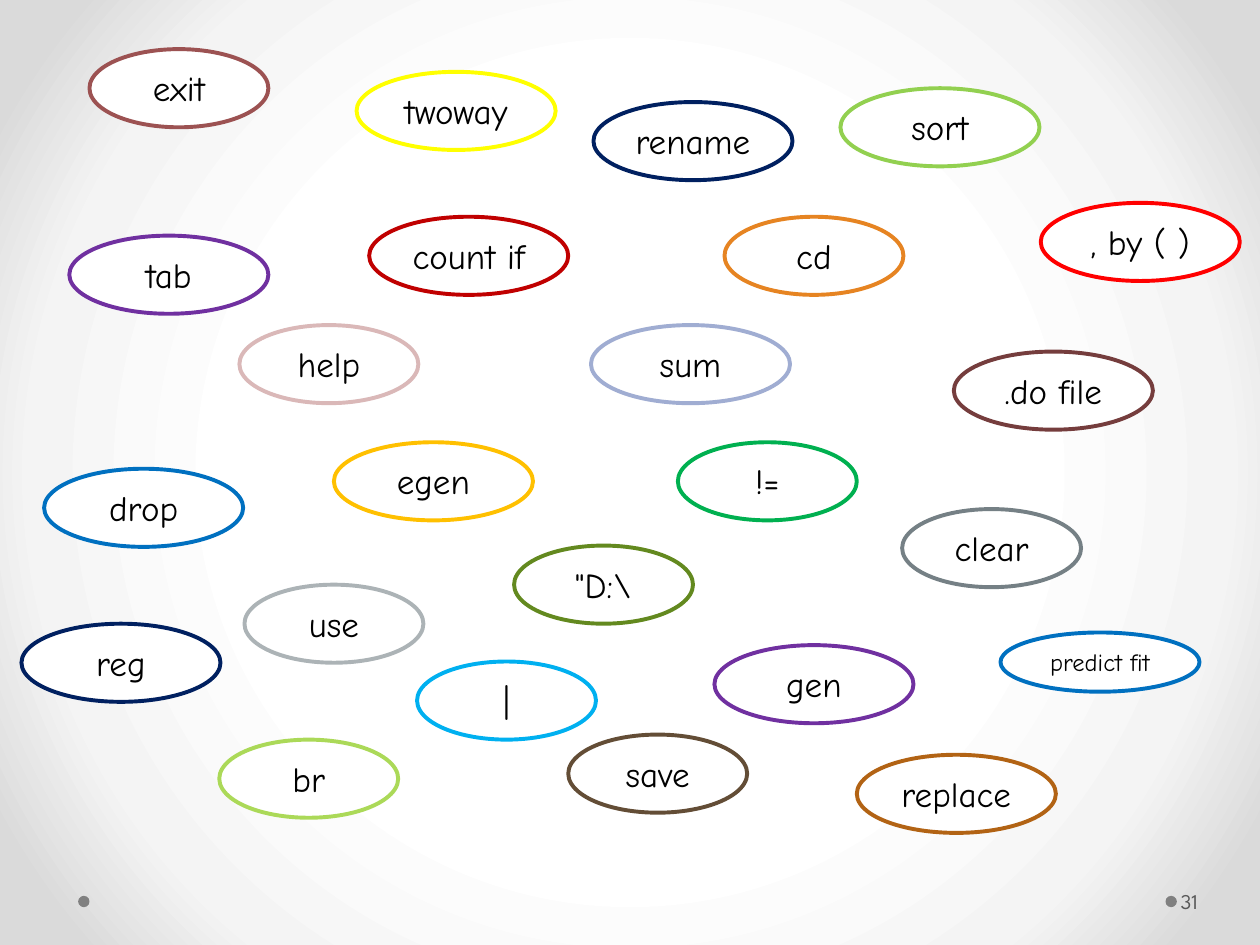
from lxml import etree
from pptx import Presentation
from pptx import util as u
from pptx.dml.color import RGBColor
from pptx.enum import shapes, text
from pptx.oxml import parse_xml
from pptx.oxml.ns import nsdecls

WHITE = RGBColor(0xFF, 0xFF, 0xFF)
PALE_GREY = RGBColor(0xF4, 0xF4, 0xF4)
EDGE_GREY = RGBColor(0xDA, 0xDA, 0xDA)
DOT_GREY = RGBColor(0x80, 0x80, 0x80)
NUMBER_GREY = RGBColor(0x59, 0x59, 0x59)
BLACK = RGBColor(0x00, 0x00, 0x00)
BRICK = RGBColor(0x9C, 0x52, 0x52)
ROSE = RGBColor(0xDA, 0xB8, 0xB8)
ORANGE = RGBColor(0xE6, 0x84, 0x22)
OLIVE = RGBColor(0x63, 0x89, 0x1F)
SILVER = RGBColor(0xAC, 0xB3, 0xB6)
SLATE = RGBColor(0x75, 0x80, 0x85)
LIME = RGBColor(0xAB, 0xD9, 0x58)
BROWN = RGBColor(0x63, 0x4D, 0x36)
COPPER = RGBColor(0xB2, 0x63, 0x14)
MAROON = RGBColor(0x75, 0x3D, 0x3D)
PERIWINKLE = RGBColor(0xA0, 0xAD, 0xD2)
PURPLE = RGBColor(0x70, 0x30, 0xA0)
NAVY = RGBColor(0x00, 0x20, 0x60)
BLUE = RGBColor(0x00, 0x70, 0xC0)
LIGHT_GREEN = RGBColor(0x92, 0xD0, 0x50)
YELLOW = RGBColor(0xFF, 0xFF, 0x00)
GOLD = RGBColor(0xFF, 0xC0, 0x00)
RED = RGBColor(0xFF, 0x00, 0x00)
DARK_RED = RGBColor(0xC0, 0x00, 0x00)
SKY = RGBColor(0x00, 0xB0, 0xF0)
GREEN = RGBColor(0x00, 0xB0, 0x50)

NARROW, WIDE = 1.42, 1.58

# command, left, top, width, outline
COMMANDS = [
    ("exit", 0.71, 0.39, NARROW, BRICK),
    ("help", 1.9, 2.58, NARROW, ROSE),
    ("cd", 5.75, 1.72, NARROW, ORANGE),
    ('"D:\\', 4.08, 4.33, NARROW, OLIVE),
    ("use", 1.94, 4.64, NARROW, SILVER),
    ("clear", 7.16, 4.04, NARROW, SLATE),
    ("br", 1.74, 5.87, NARROW, LIME),
    ("save", 4.51, 5.83, NARROW, BROWN),
    ("replace", 6.8, 5.99, WIDE, COPPER),
    (".do file", 7.57, 2.79, WIDE, MAROON),
    ("sum", 4.69, 2.58, WIDE, PERIWINKLE),
    ("tab", 0.55, 1.87, WIDE, PURPLE),
    ("rename", 4.71, 0.81, WIDE, NAVY),
    ("drop", 0.35, 3.72, WIDE, BLUE),
    ("sort", 6.67, 0.7, WIDE, LIGHT_GREEN),
    ("twoway", 2.83, 0.57, WIDE, YELLOW),
    ("egen", 2.65, 3.51, WIDE, GOLD),
    (", by ( )", 8.26, 1.61, WIDE, RED),
    ("count if", 2.93, 1.72, WIDE, DARK_RED),
    ("reg", 0.17, 4.95, WIDE, NAVY),
    ("gen", 5.67, 5.12, WIDE, PURPLE),
    ("predict fit", 7.94, 5.02, WIDE, BLUE),
    ("|", 3.31, 5.25, NARROW, SKY),
    ("!=", 5.38, 3.51, NARROW, GREEN),
]
SMALL_COMMANDS = {"predict fit"}


class CommandSlide:
    body_font = "Comic Neue"
    number_font = "League Spartan"

    def __init__(self, slide):
        self.slide = slide

    def background(self, stops):
        """Fill the background with a gradient running out from the centre."""
        fill = self.slide.background.fill
        fill.solid()
        stop_xml = "".join(
            f'<a:gs pos="{percent * 1000}"><a:srgbClr val="{color}"/></a:gs>'
            for percent, color in stops)
        gradient = parse_xml(
            f'<a:gradFill {nsdecls("a")} rotWithShape="1"><a:gsLst>{stop_xml}</a:gsLst>'
            '<a:path path="circle"><a:fillToRect l="50000" t="50000" r="50000" b="50000"/>'
            '</a:path></a:gradFill>')
        properties = self.slide.background._cSld.bg.bgPr
        properties.replace(properties[0], gradient)

    def add_run(self, paragraph, words, font, size, color):
        run = paragraph.add_run()
        run.text = words
        run.font.name = font
        run.font.size = u.Pt(size)
        run.font.color.rgb = color

    def dot(self, left, top, size=0.09):
        dot = self.slide.shapes.add_shape(
            shapes.MSO_SHAPE.OVAL, *map(u.Inches, (left, top, size, size)))
        dot.shadow.inherit = False
        dot.fill.solid()
        dot.fill.fore_color.rgb = DOT_GREY
        dot.line.fill.background()

    def page_number(self, number, left, top, width, height):
        box = self.slide.shapes.add_textbox(
            *map(u.Inches, (left, top, width, height)))
        frame = box.text_frame
        frame.word_wrap = True
        frame.vertical_anchor = text.MSO_ANCHOR.MIDDLE
        frame.margin_left = u.Inches(0.03)
        frame.margin_right = u.Inches(0.05)
        self.add_run(frame.paragraphs[0], number, self.number_font, 12, NUMBER_GREY)

    def bubble(self, command, left, top, width, outline, small=False):
        height, size = (0.47, 14) if small else (0.62, 20)
        bubble = self.slide.shapes.add_shape(
            shapes.MSO_SHAPE.FLOWCHART_CONNECTOR,
            *map(u.Inches, (left, top, width, height)))
        bubble.shadow.inherit = False
        bubble.fill.solid()
        bubble.fill.fore_color.rgb = WHITE
        bubble.line.color.rgb = outline
        bubble.line.width = u.Pt(2.25)
        frame = bubble.text_frame
        frame.word_wrap = True
        frame.auto_size = text.MSO_AUTO_SIZE.SHAPE_TO_FIT_TEXT
        frame.vertical_anchor = text.MSO_ANCHOR.TOP
        paragraph = frame.paragraphs[0]
        paragraph.alignment = text.PP_ALIGN.CENTER
        self.add_run(paragraph, command, self.body_font, size, BLACK)


def main():
    deck = Presentation()
    deck.slide_width, deck.slide_height = u.Inches(10), u.Inches(7.5)
    page = CommandSlide(deck.slides.add_slide(deck.slide_layouts[6]))
    page.background([(50, WHITE), (76, PALE_GREY), (92, EDGE_GREY)])
    for left in (9.25, 0.62):
        page.dot(left, 7.11)
    page.page_number("31", 9.34, 6.95, 0.61, 0.4)
    for command, *place, outline in COMMANDS:
        page.bubble(command, *place, outline, small=command in SMALL_COMMANDS)
    deck.save("out.pptx")


if __name__ == "__main__":
    main()
